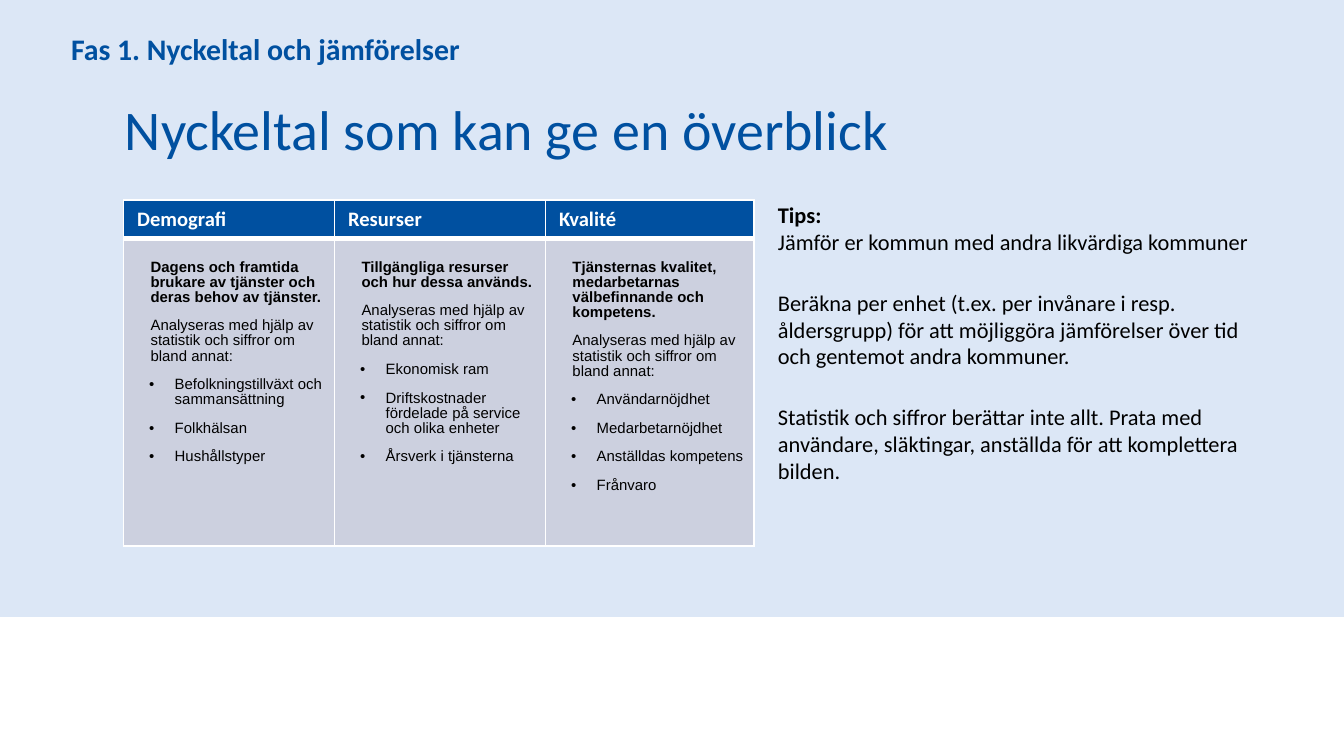
from dataclasses import dataclass

from lxml import etree
from pptx import Presentation
from pptx.dml.color import RGBColor
from pptx.enum.shapes import MSO_SHAPE
from pptx.enum.text import MSO_ANCHOR, PP_ALIGN
from pptx.oxml.ns import qn
from pptx.util import Inches, Pt

RECTANGLE = MSO_SHAPE.RECTANGLE
MIDDLE, TOP = MSO_ANCHOR.MIDDLE, MSO_ANCHOR.TOP
LEFT = PP_ALIGN.LEFT
TITLE_ONLY = 5


@dataclass(frozen=True)
class Theme:
    blue: str = "0050A0"
    band: str = "DCE7F6"
    cell: str = "CCD0DF"
    white: str = "FFFFFF"
    black: str = "000000"
    heading_font: str = "Calibri"
    cell_font: str = "Arial"
    title_size: float = 30
    phase_size: float = 16
    tips_size: float = 12
    header_size: float = 11
    cell_size: float = 8


THEME = Theme()

PHASE = "Fas 1. Nyckeltal och jämförelser"
TITLE = "Nyckeltal som kan ge en överblick"
ANALYSIS = "Analyseras med hjälp av statistik och siffror om bland annat:"
AREAS = [
    ("Demografi",
     "Dagens och framtida brukare av tjänster och deras behov av tjänster.",
     ["Befolkningstillväxt och sammansättning", "Folkhälsan", "Hushållstyper"]),
    ("Resurser",
     "Tillgängliga resurser och hur dessa används.",
     ["Ekonomisk ram", "Driftskostnader fördelade på service och olika enheter",
      "Årsverk i tjänsterna"]),
    ("Kvalité",
     "Tjänsternas kvalitet, medarbetarnas välbefinnande och kompetens.",
     ["Användarnöjdhet", "Medarbetarnöjdhet", "Anställdas kompetens", "Frånvaro"]),
]
TIPS_HEADING = "Tips:"
TIPS = [
    "Jämför er kommun med andra likvärdiga kommuner",
    "Beräkna per enhet (t.ex. per invånare i resp. åldersgrupp) för att "
    "möjliggöra jämförelser över tid och gentemot andra kommuner.",
    "Statistik och siffror berättar inte allt. Prata med användare, släktingar, "
    "anställda för att komplettera bilden.",
]


def apply(target, values):
    for name, value in values.items():
        setattr(target, name, value)


def style_font(font, family, size, color, bold=False):
    apply(font, {"name": family, "size": Pt(size), "bold": bold})
    font.color.rgb = RGBColor.from_string(color)


def set_fill(target, color):
    target.fill.solid()
    target.fill.fore_color.rgb = RGBColor.from_string(color)


def place(shape, box):
    apply(shape, dict(zip(("left", "top", "width", "height"), map(Inches, box))))


def set_borders(cell, widths):
    """Draw white cell borders; widths are points for left, right, top, bottom."""
    properties = cell._tc.get_or_add_tcPr()
    for index, (side, width) in enumerate(zip("LRTB", widths)):
        line = etree.Element(qn(f"a:ln{side}"), w=str(Pt(width)))
        fill = etree.SubElement(line, qn("a:solidFill"))
        etree.SubElement(fill, qn("a:srgbClr"), val=THEME.white)
        properties.insert(index, line)


def add_band(slide, box):
    band = slide.shapes.add_shape(RECTANGLE, *map(Inches, box))
    band.shadow.inherit = False
    set_fill(band, THEME.band)
    band.line.fill.background()
    slide.shapes.title.element.addprevious(band.element)


def write_heading(shape, text, size, bold):
    frame = shape.text_frame
    frame.text = text
    apply(frame, {"word_wrap": True, "vertical_anchor": MIDDLE,
                  "margin_top": 0, "margin_bottom": 0})
    paragraph = frame.paragraphs[0]
    apply(paragraph, {"alignment": LEFT, "space_before": Pt(0)})
    style_font(paragraph.runs[0].font, THEME.heading_font, size, THEME.blue, bold)


def add_headings(slide, title_box, phase_box):
    place(slide.shapes.title, title_box)
    write_heading(slide.shapes.title, TITLE, THEME.title_size, False)
    phase = slide.shapes.add_textbox(*map(Inches, phase_box))
    write_heading(phase, PHASE, THEME.phase_size, True)


def fill_area(cell, summary, measures):
    frame = cell.text_frame
    lines = [(summary, True, False), (ANALYSIS, False, False)]
    lines += [(measure, False, True) for measure in measures]
    for index, (text, bold, bulleted) in enumerate(lines):
        paragraph = frame.add_paragraph() if index else frame.paragraphs[0]
        margin, indent = (0.28, -0.19) if bulleted else (0.1, 0)
        properties = paragraph._p.get_or_add_pPr()
        properties.set("marL", str(Inches(margin)))
        properties.set("indent", str(Inches(indent)))
        if bulleted:
            etree.SubElement(properties, qn("a:buFont"), typeface=THEME.cell_font)
            etree.SubElement(properties, qn("a:buChar"), char="•")
        apply(paragraph, {"level": 1, "line_spacing": 0.9, "space_after": Pt(1.2),
                          "space_before": Pt(6 if index else 0)})
        run = paragraph.add_run()
        run.text = text
        style_font(run.font, THEME.cell_font, THEME.cell_size, THEME.black, bold)


def add_area_table(slide, box):
    table = slide.shapes.add_table(2, len(AREAS), *map(Inches, box)).table
    table.horz_banding = False
    header_height = 0.27
    table.rows[0].height = Inches(header_height)
    table.rows[1].height = Inches(box[3] - header_height - 0.02)
    for column, width in zip(table.columns, (1.57, 1.57, 1.55)):
        column.width = Inches(width)

    for index, (name, summary, measures) in enumerate(AREAS):
        header, body = table.cell(0, index), table.cell(1, index)
        header.text = name
        style_font(header.text_frame.paragraphs[0].runs[0].font,
                   THEME.heading_font, THEME.header_size, THEME.white, True)
        fill_area(body, summary, measures)
        apply(body, {"margin_top": Inches(0.16), "margin_right": Inches(0.05)})
        for cell, color, widths in ((header, THEME.blue, (1, 1, 1, 3)),
                                    (body, THEME.cell, (1, 1, 3, 1))):
            cell.vertical_anchor = TOP
            set_fill(cell, color)
            set_borders(cell, widths)


def add_tips(slide, box):
    frame = slide.shapes.add_textbox(*map(Inches, box)).text_frame
    frame.word_wrap = True
    for index, tip in enumerate(TIPS):
        paragraph = frame.add_paragraph() if index else frame.paragraphs[0]
        apply(paragraph, {"space_before": Pt(12 if index else 0),
                          "space_after": Pt(6)})
        if not index:
            heading = paragraph.add_run()
            heading.text = TIPS_HEADING
            style_font(heading.font, THEME.heading_font, THEME.tips_size,
                       THEME.black, True)
            paragraph.add_line_break()
        run = paragraph.add_run()
        run.text = tip
        style_font(run.font, THEME.heading_font, THEME.tips_size, THEME.black)


def main():
    deck = Presentation()
    # Widescreen 16:9, 720 by 405 points
    apply(deck, {"slide_width": Inches(10), "slide_height": Pt(405)})
    slide = deck.slides.add_slide(deck.slide_layouts[TITLE_ONLY])

    # Background band and headings
    add_band(slide, (0, 0, 10, 4.59))
    add_headings(slide, (0.83, 0.63, 8.43, 0.64), (0.43, 0.27, 8.82, 0.18))

    # Key figures on the left, advice on the right
    add_area_table(slide, (0.92, 1.49, 4.69, 2.58))
    add_tips(slide, (5.69, 1.45, 3.7, 3.16))

    deck.save("out.pptx")


if __name__ == "__main__":
    main()
